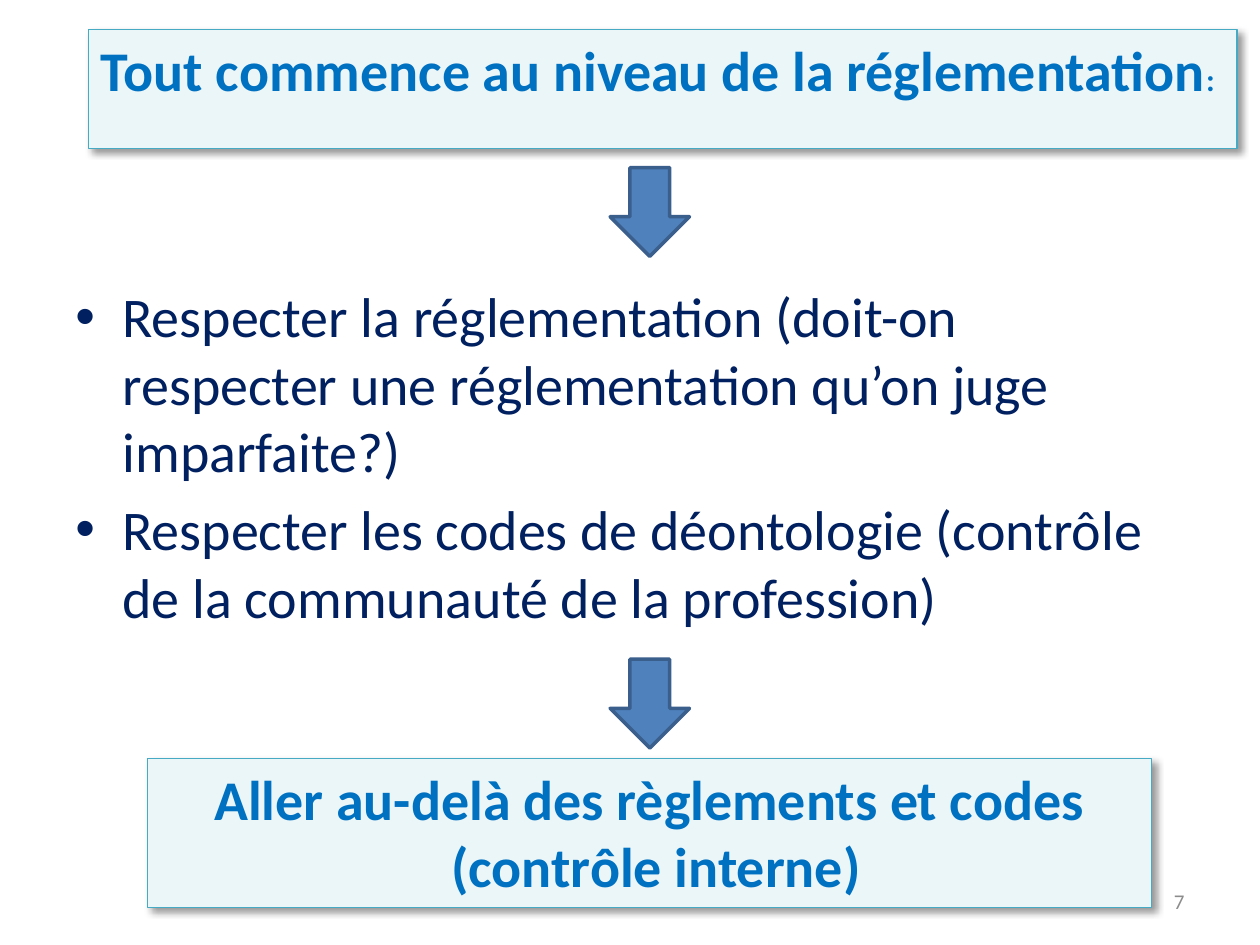
from pptx import Presentation
from pptx.dml.color import RGBColor
from pptx.enum.shapes import MSO_SHAPE as Shape
from pptx.enum.text import MSO_ANCHOR as Anchor, MSO_AUTO_SIZE as AutoSize, PP_ALIGN as Align
from pptx.oxml import parse_xml
from pptx.oxml.ns import nsdecls
from pptx.util import Cm, Pt

PALE = RGBColor(0xEB, 0xF6, 0xF9)
TEAL = RGBColor(0x46, 0xAA, 0xC5)
BRIGHT = RGBColor(0x00, 0x70, 0xC0)
NAVY = RGBColor(0x00, 0x20, 0x60)
STEEL = RGBColor(0x4F, 0x81, 0xBD)
STEEL_DARK = RGBColor(0x3A, 0x5F, 0x8C)
GREY = RGBColor(0x8C, 0x8C, 0x8C)


class SlideBuilder:
    font = "Calibri"
    size = 32

    def __init__(self, page):
        self.page = page

    def add_span(self, para, text, color, size=size, bold=False):
        span = para.add_run()
        span.text = text
        span.font.name = self.font
        span.font.size = Pt(size)
        span.font.bold = bold
        span.font.color.rgb = color

    def paragraphs(self, box, count, align, anchor):
        frame = box.text_frame
        frame.word_wrap = True
        frame.auto_size = AutoSize.NONE
        frame.vertical_anchor = anchor
        paras = [frame.paragraphs[0]] + [frame.add_paragraph() for _ in range(count - 1)]
        for para in paras:
            para.alignment = align
        return paras

    def paint(self, box, fill, line, width):
        box.fill.solid()
        box.fill.fore_color.rgb = fill
        box.line.color.rgb = line
        box.line.width = Pt(width)

    def banner(self, box, lines, align):
        self.paint(box, PALE, TEAL, 0.75)
        box._element.spPr.append(parse_xml(
            f'<a:effectLst {nsdecls("a")}>'
            f'<a:outerShdw blurRad="{Pt(4)}" dist="{Pt(3)}" dir="2700000" rotWithShape="0">'
            '<a:srgbClr val="000000"><a:alpha val="40000"/></a:srgbClr>'
            '</a:outerShdw></a:effectLst>'))
        for para, spans in zip(self.paragraphs(box, len(lines), align, Anchor.TOP), lines):
            for text, size in spans:
                self.add_span(para, text, BRIGHT, size, bold=True)

    def title(self, left, top, width, height, lines):
        box = self.page.shapes.title
        box.left, box.top, box.width, box.height = left, top, width, height
        self.banner(box, lines, Align.LEFT)

    def conclusion(self, left, top, width, height, lines):
        box = self.page.shapes.add_shape(Shape.RECTANGLE, left, top, width, height)
        self.banner(box, lines, Align.CENTER)

    def down_arrow(self, left, top, width, height):
        arrow = self.page.shapes.add_shape(Shape.DOWN_ARROW, left, top, width, height)
        arrow.shadow.inherit = False
        self.paint(arrow, STEEL, STEEL_DARK, 2)

    def bullets(self, left, top, width, height, items):
        box = self.page.shapes.add_textbox(left, top, width, height)
        for para, item in zip(self.paragraphs(box, len(items), Align.LEFT, Anchor.TOP), items):
            para.space_after = Pt(6.4)
            props = para._p.get_or_add_pPr()
            props.set("marL", str(Cm(0.95)))
            props.set("indent", str(-Cm(0.95)))
            props.append(parse_xml(f'<a:buFont {nsdecls("a")} typeface="Arial"/>'))
            props.append(parse_xml(f'<a:buChar {nsdecls("a")} char="•"/>'))
            self.add_span(para, item, NAVY)

    def page_number(self, left, top, width, height, number):
        box = self.page.shapes.add_textbox(left, top, width, height)
        para = self.paragraphs(box, 1, Align.RIGHT, Anchor.MIDDLE)[0]
        self.add_span(para, number, GREY, 12)


def main():
    deck = Presentation()
    deck.slide_width, deck.slide_height = Cm(25.4), Cm(19.05)
    builder = SlideBuilder(deck.slides.add_slide(deck.slide_layouts[5]))

    builder.title(Cm(1.78), Cm(0.59), Cm(23.16), Cm(2.4), [
        [("Tout commence au niveau de la réglementation", 32), (":", 18)]])
    builder.bullets(Cm(1.27), Cm(5.56), Cm(22.86), Cm(7.54), [
        "Respecter la réglementation (doit-on respecter une réglementation qu’on juge imparfaite?)",
        "Respecter les codes de déontologie (contrôle de la communauté de la profession)"])
    for top in (3.38, 13.29):
        builder.down_arrow(Cm(12.3), Cm(top), Cm(1.6), Cm(1.79))
    builder.conclusion(Cm(2.98), Cm(15.29), Cm(20.24), Cm(3), [
        [("Aller au-delà des règlements et codes", 32)],
        [(" (contrôle interne)", 32)]])
    builder.page_number(Cm(18.2), Cm(17.66), Cm(5.93), Cm(1.01), "7")

    deck.save("out.pptx")


if __name__ == "__main__":
    main()
